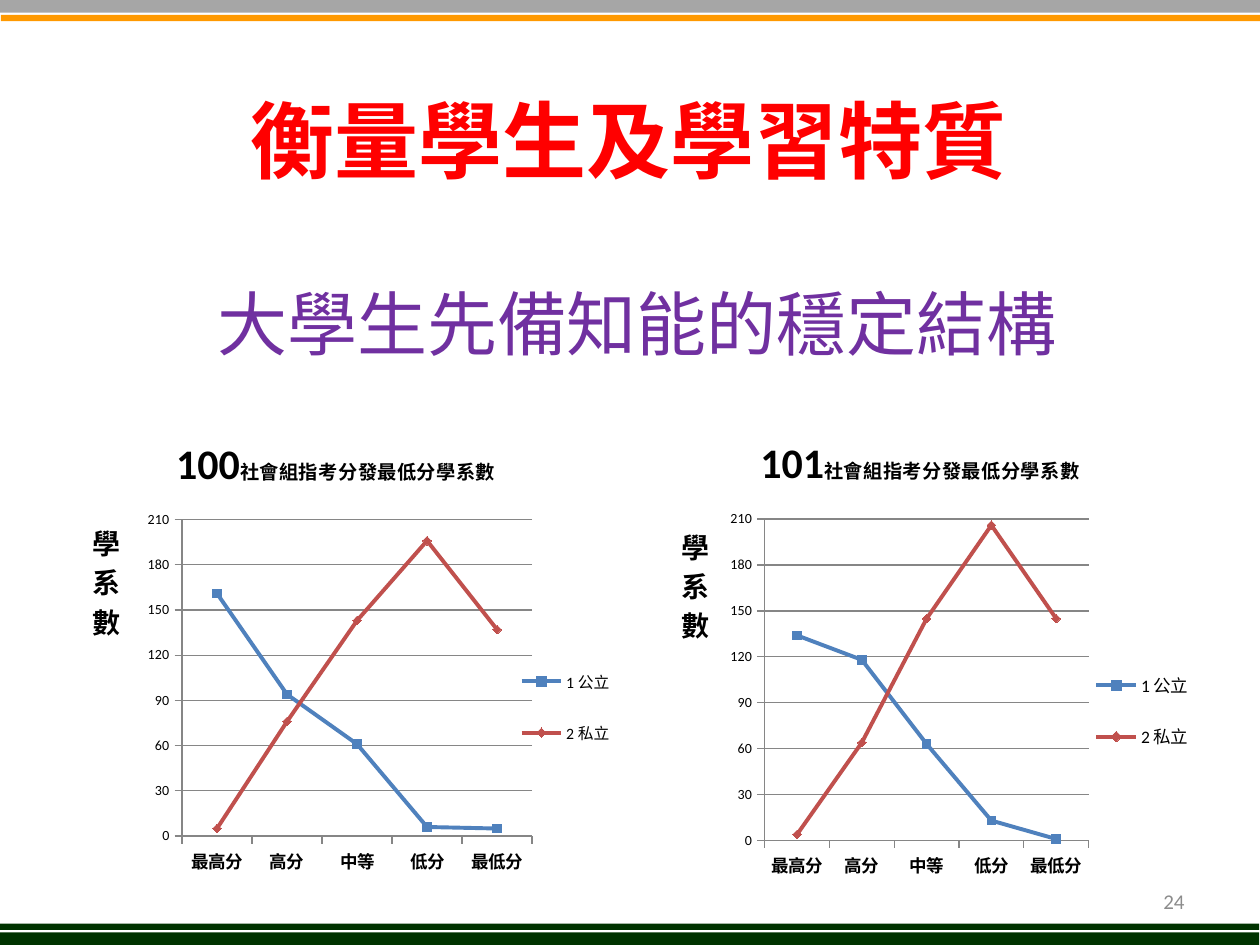
from lxml import etree
from pptx import Presentation
from pptx.chart.data import CategoryChartData as ChartData
from pptx.dml.color import RGBColor
from pptx.enum.chart import XL_CHART_TYPE as Kind, XL_LEGEND_POSITION as Side
from pptx.enum.chart import XL_TICK_MARK as Tick
from pptx.enum.shapes import MSO_SHAPE as Form
from pptx.enum.text import MSO_ANCHOR as Anchor, PP_ALIGN as Align
from pptx.oxml.ns import qn
from pptx.util import Pt

ORANGE = RGBColor(0xFF, 0x99, 0x00)
GRAY = RGBColor(0xA6, 0xA6, 0xA6)
GREEN = RGBColor(0x00, 0x33, 0x00)
RED = RGBColor(0xFF, 0x00, 0x00)
PURPLE = RGBColor(0x70, 0x30, 0xA0)
PALE = RGBColor(0x8C, 0x8C, 0x8C)
BLACK = RGBColor(0x00, 0x00, 0x00)
RULE = RGBColor(0x86, 0x86, 0x86)
LINES = (RGBColor(0x4F, 0x81, 0xBD), RGBColor(0xC0, 0x50, 0x4D))

LATIN = "Calibri"
HAN = "Noto Sans CJK SC"
WIDE = 720
CATS = ("最高分", "高分", "中等", "低分", "最低分")
NAMES = ("1 公立", "2 私立")


def place(node, x, y, w=None, h=None, inner=False):
    """Give a chart part a manual layout, in fractions of the chart."""
    old = node.find(qn("c:layout"))
    if old is not None:
        node.remove(old)
    layout = etree.Element(qn("c:layout"))
    manual = etree.SubElement(layout, qn("c:manualLayout"))
    pairs = [("xMode", "edge"), ("yMode", "edge"), ("x", x), ("y", y)]
    if inner:
        pairs.insert(0, ("layoutTarget", "inner"))
    if w is not None:
        pairs += [("w", w), ("h", h)]
    for tag, val in pairs:
        etree.SubElement(manual, qn("c:" + tag)).set("val", str(val))
    over = node.find(qn("c:overlay"))
    if over is None:
        node.insert(0, layout)
    else:
        over.addprevious(layout)


class Deck:
    def __init__(self):
        self.prs = Presentation()
        self.prs.slide_width, self.prs.slide_height = Pt(WIDE), Pt(540)
        self.slide = self.prs.slides.add_slide(self.prs.slide_layouts[6])

    def style(self, font, size, color, bold=False, face=LATIN):
        font.size, font.bold, font.name = Pt(size), bold, face
        font.color.rgb = color

    def bar(self, x, y, high, color):
        shape = self.slide.shapes.add_shape(
            Form.RECTANGLE, Pt(x), Pt(y), Pt(WIDE), Pt(high))
        shape.shadow.inherit = False
        shape.fill.solid()
        shape.fill.fore_color.rgb = color
        shape.line.fill.background()

    def text(self, box, words, size, color, bold=False, face=HAN,
             align=Align.CENTER, anchor=Anchor.MIDDLE):
        frame = self.slide.shapes.add_textbox(*map(Pt, box)).text_frame
        frame.word_wrap = True
        frame.vertical_anchor = anchor
        para = frame.paragraphs[0]
        para.text = words
        para.alignment = align
        run = para.runs[0]
        self.style(run.font, size, color, bold, face)
        if face == HAN:
            etree.SubElement(run.font._element, qn("a:ea")).set("typeface", HAN)

    def axis(self, axis, size, bold):
        self.style(axis.tick_labels.font, size, BLACK, bold)
        axis.major_tick_mark = Tick.OUTSIDE
        axis.minor_tick_mark = Tick.NONE
        axis.format.line.color.rgb = RULE
        axis.format.line.width = Pt(0.75)

    def chart(self, box, year, rows, plot, title, side, legend, size):
        data = ChartData(number_format="###0")
        data.categories = CATS
        for name, vals in zip(NAMES, rows):
            data.add_series(name, vals)
        chart = self.slide.shapes.add_chart(
            Kind.LINE, *map(Pt, box), data).chart
        self.style(chart.font, 10, BLACK)
        place(chart._chartSpace.chart.plotArea, *plot, inner=True)

        # Title: large year, small caption
        chart.has_title = True
        para = chart.chart_title.text_frame.paragraphs[0]
        for words, points in ((year, 24), ("社會組指考分發最低分學系數", 11)):
            run = para.add_run()
            run.text = words
            self.style(run.font, points, BLACK, True)
        place(chart.chart_title._element, *title)

        # Axes
        self.axis(chart.category_axis, 10, True)
        axis = chart.value_axis
        self.axis(axis, 8, False)
        axis.minimum_scale, axis.maximum_scale, axis.major_unit = 0, 210, 30
        axis.tick_labels.number_format = "###0"
        axis.tick_labels.number_format_is_linked = False
        grid = axis.major_gridlines.format.line
        grid.color.rgb, grid.width = RULE, Pt(0.75)
        frame = axis.axis_title.text_frame
        frame.text = "學系數"
        self.style(frame.paragraphs[0].runs[0].font, 16, BLACK, True)
        body = frame._txBody.bodyPr
        body.set("rot", "0")
        body.set("vert", "wordArtVertRtl")
        place(axis.axis_title._element, *side)

        # Legend and lines
        chart.has_legend = True
        chart.legend.position = Side.RIGHT
        chart.legend.include_in_layout = False
        self.style(chart.legend.font, size, BLACK)
        place(chart.legend._element, *legend)
        chart.plots[0].vary_by_categories = False
        for series, color in zip(chart.plots[0].series, LINES):
            series.smooth = False
            series.marker.style = None
            series.format.line.color.rgb = color
            series.format.line.width = Pt(2.25)


def main():
    deck = Deck()

    # Bands at top and bottom
    deck.bar(0, 0, 7.2, GRAY)
    deck.bar(0.5, 8.5, 3.6, ORANGE)
    deck.bar(-0.5, 532.8, 7.2, GREEN)
    deck.bar(-0.5, 527.8, 3.6, GREEN)

    # Subtitle and page number
    deck.text((40, 156, 648, 57), "大學生先備知能的穩定結構", 40, PURPLE)
    deck.text((516, 500.5, 168, 29), "24", 12, PALE,
              face=LATIN, align=Align.RIGHT)

    # Charts for the two years
    deck.chart((40.3, 230.4, 323.3, 289.4), "100",
               ((161, 94, 61, 6, 5), (5, 76, 143, 196, 137)),
               plot=(0.197, 0.23, 0.619, 0.625), title=(0.18, 0.06),
               side=(0.03, 0.22), legend=(0.78, 0.47, 0.19, 0.26), size=9)
    deck.chart((377.3, 236.2, 306, 272.2), "101",
               ((134, 118, 63, 13, 1), (4, 64, 145, 206, 145)),
               plot=(0.195, 0.222, 0.605, 0.675), title=(0.18, 0.04),
               side=(0.03, 0.22), legend=(0.8, 0.49, 0.2, 0.27), size=10)

    # Headline
    deck.text((35.3, 46.8, 648, 96.5), "衡量學生及學習特質", 48, RED,
              bold=True, anchor=Anchor.TOP)
    deck.prs.save("out.pptx")


if __name__ == "__main__":
    main()
